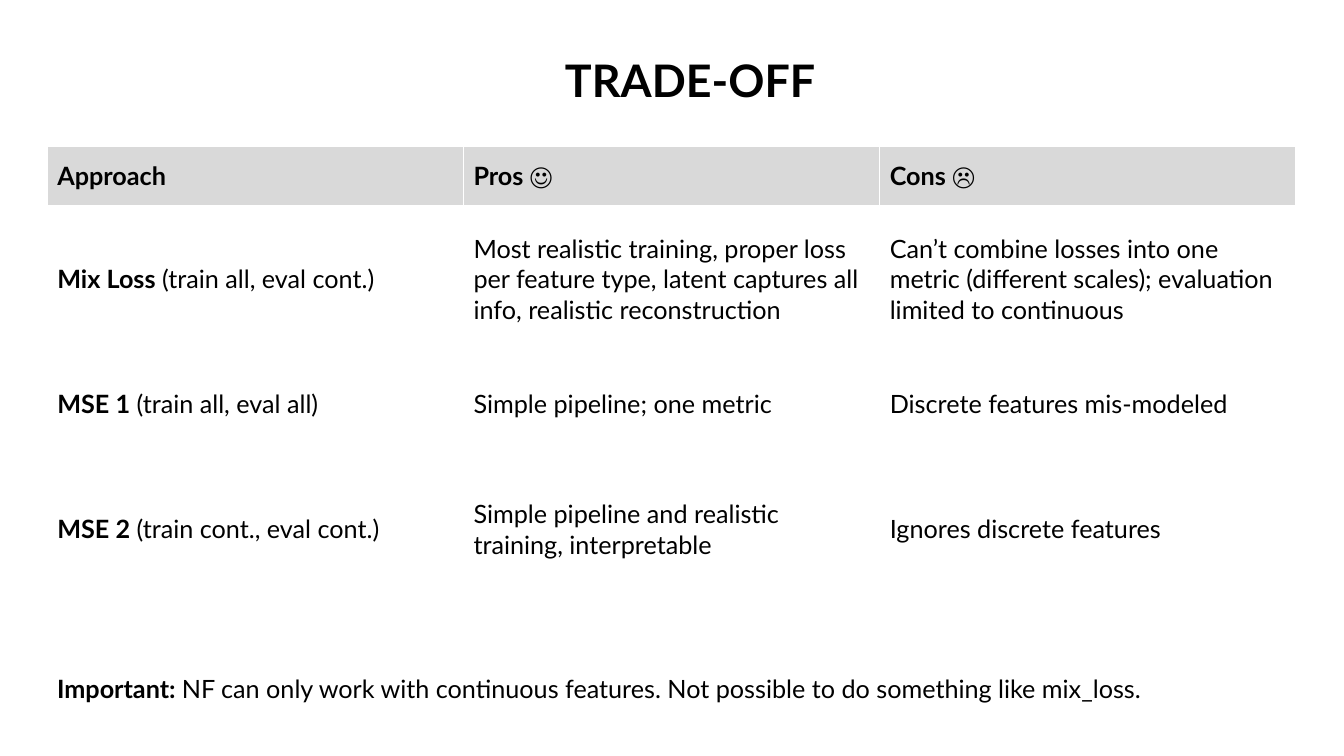
from pptx import Presentation
from pptx.dml.color import RGBColor
from pptx.enum import text
from pptx.util import Cm, Pt

BLACK = RGBColor(0x00, 0x00, 0x00)
HEADER_GREY = RGBColor(0xD9, 0xD9, 0xD9)
FONT = "Lato"

TITLE = "TRADE-OFF"
HEADERS = ["Approach", "Pros ☺", "Cons ☹"]
# Approach name, its setup, pros, cons
APPROACHES = [
    ("Mix Loss", " (train all, eval cont.)",
     "Most realistic training, proper loss per feature type, "
     "latent captures all info, realistic reconstruction",
     "Can’t combine losses into one metric (different scales); "
     "evaluation limited to continuous"),
    ("MSE 1", " (train all, eval all)",
     "Simple pipeline; one metric",
     "Discrete features mis-modeled"),
    ("MSE 2", " (train cont., eval cont.)",
     "Simple pipeline and realistic training, interpretable",
     "Ignores discrete features"),
]
NOTE = ("Important: ", "NF can only work with continuous features. "
        "Not possible to do something like mix_loss.")

LEFT = Cm(1.19)
COLUMN_WIDTH = Cm(10.49)
ROW_HEIGHTS = [Cm(1.5), Cm(3.71), Cm(2.59), Cm(3.71)]


def write(frame, bold="", plain="", size=18, align=text.PP_ALIGN.LEFT):
    """Fill the frame with one paragraph: a bold part, then a plain part."""
    frame.word_wrap = True
    paragraph = frame.paragraphs[0]
    paragraph.alignment = align
    for words, is_bold in ((bold, True), (plain, False)):
        if words:
            run = paragraph.add_run()
            run.text = words
            run.font.name = FONT
            run.font.size = Pt(size)
            run.font.bold = is_bold
            run.font.color.rgb = BLACK


def add_comparison(slide):
    rows = [[(header, "") for header in HEADERS]]
    rows += [[(name, setup), ("", pros), ("", cons)]
             for name, setup, pros, cons in APPROACHES]
    table = slide.shapes.add_table(
        len(rows), len(HEADERS), LEFT, Cm(3.68),
        COLUMN_WIDTH * len(HEADERS), sum(ROW_HEIGHTS)).table
    table.first_row = False
    table.horz_banding = False
    for column in table.columns:
        column.width = COLUMN_WIDTH
    for row_index, (parts, height) in enumerate(zip(rows, ROW_HEIGHTS)):
        table.rows[row_index].height = height
        for column_index, (bold, plain) in enumerate(parts):
            cell = table.cell(row_index, column_index)
            cell.vertical_anchor = text.MSO_ANCHOR.MIDDLE
            if row_index == 0:
                cell.fill.solid()
                cell.fill.fore_color.rgb = HEADER_GREY
            else:
                cell.fill.background()
            write(cell.text_frame, bold, plain)


def main():
    presentation = Presentation()
    presentation.slide_width = Cm(33.87)
    presentation.slide_height = Cm(19.05)
    slide = presentation.slides.add_slide(presentation.slide_layouts[5])

    title = slide.shapes.title
    title.left, title.top = Cm(5), Cm(1.19)
    title.width, title.height = Cm(24.79), Cm(1.63)
    title.text_frame.vertical_anchor = text.MSO_ANCHOR.TOP
    write(title.text_frame, TITLE, size=32, align=text.PP_ALIGN.CENTER)

    add_comparison(slide)

    note = slide.shapes.add_textbox(LEFT, Cm(16.84), Cm(29.08), Cm(1.02))
    write(note.text_frame, *NOTE)

    presentation.save("out.pptx")


if __name__ == "__main__":
    main()
